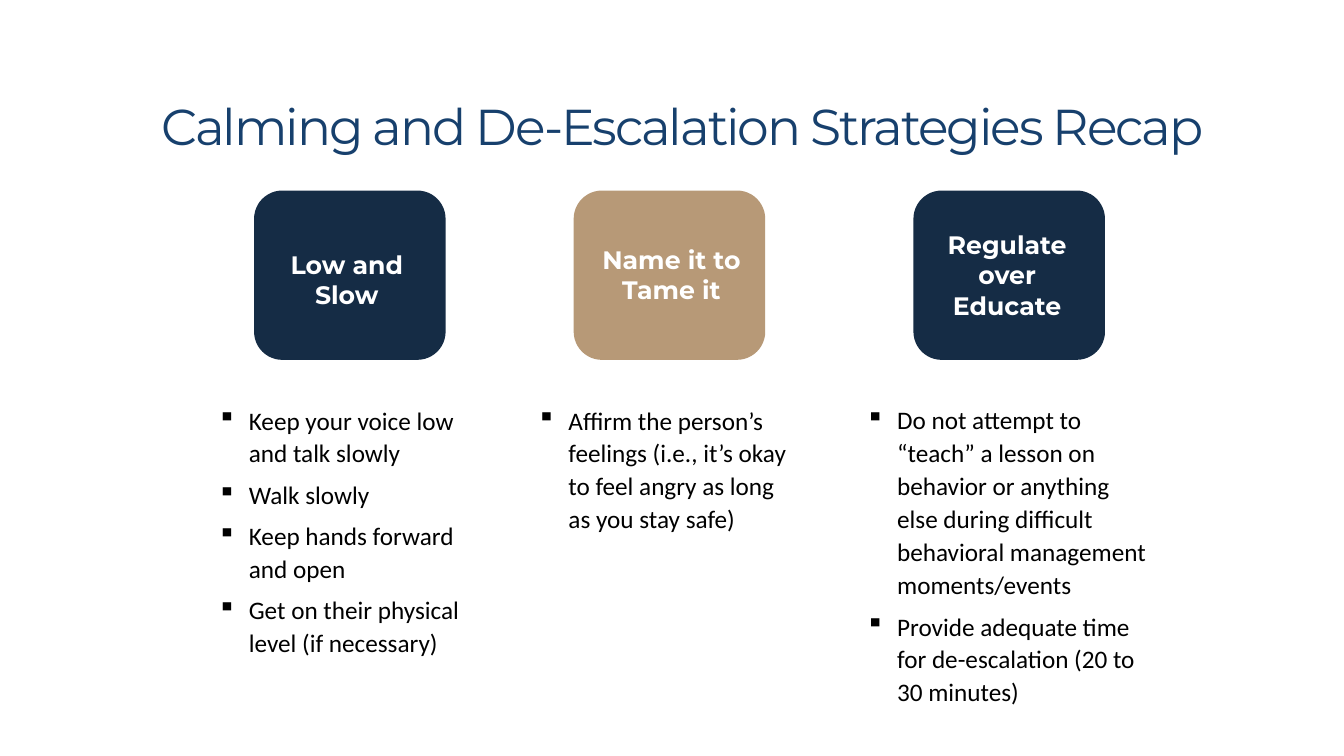
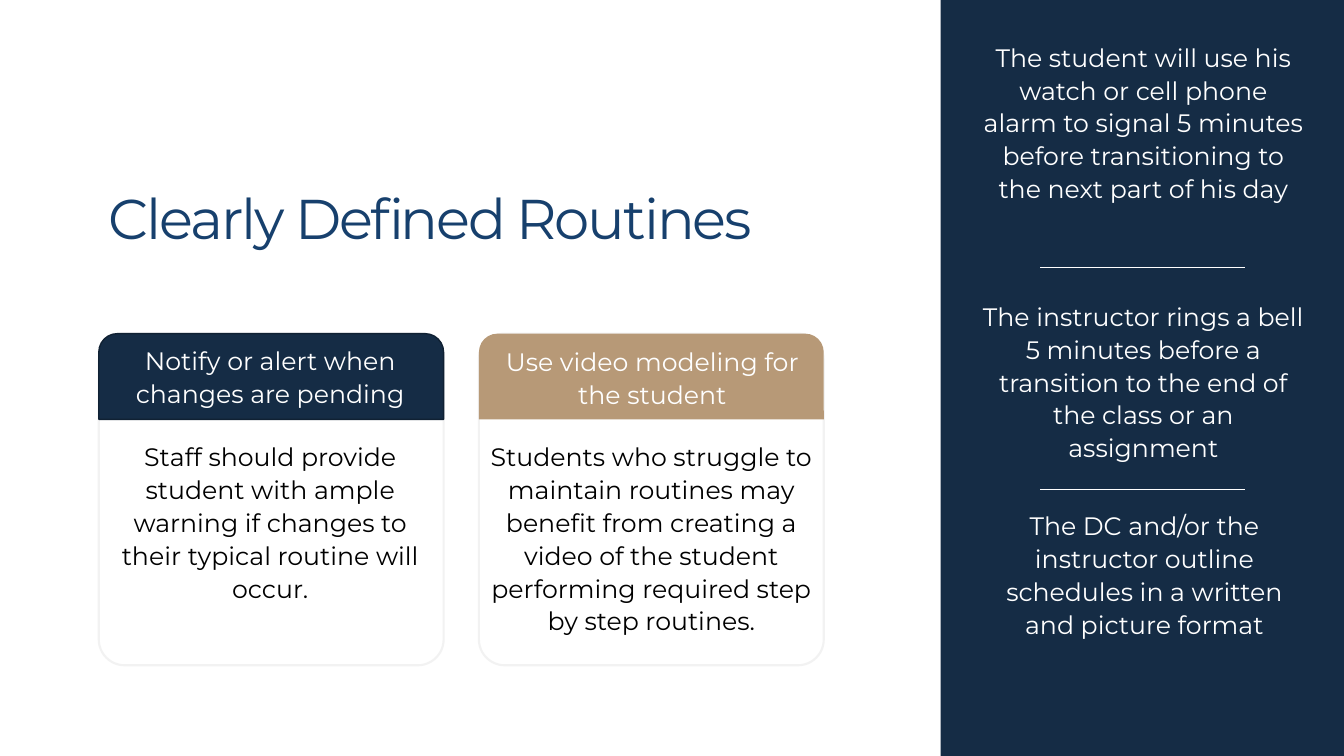
from lxml.etree import SubElement
from pptx import Presentation
from pptx.dml.color import RGBColor
from pptx.enum.shapes import MSO_CONNECTOR, MSO_SHAPE
from pptx.enum.text import MSO_ANCHOR, PP_ALIGN
from pptx.oxml.ns import qn
from pptx.util import Inches, Pt

NAVY = RGBColor(0x15, 0x2C, 0x45)
NAVY_EDGE = RGBColor(0x10, 0x21, 0x33)
TAN = RGBColor(0xB7, 0x99, 0x77)
TITLE_BLUE = RGBColor(0x17, 0x40, 0x6D)
PALE = RGBColor(0xF2, 0xF2, 0xF2)
WHITE = RGBColor(0xFF, 0xFF, 0xFF)
BLACK = RGBColor(0x00, 0x00, 0x00)

HEAD_FONT = "Montserrat"
BODY_FONT = "Calibri"

TILE_TOP, TILE_W, TILE_H = 1.89, 1.9, 1.68
CARD_TOP, CARD_W, CARD_H, HEADER_H = 3.31, 3.42, 3.29, 0.85

STRATEGIES = [
    (2.52, NAVY, "Low and Slow", (2.51, 2.42), (2.06, 2.82, 2.65), [
        "Keep your voice low and talk slowly",
        "Walk slowly",
        "Keep hands forward and open",
        "Get on their physical level (if necessary)",
    ]),
    (5.69, TAN, "Name it to Tame it", (5.73, 2.37), (5.23, 2.82, 1.41), [
        "Affirm the person’s feelings (i.e., it’s okay to feel angry as long "
        "as you stay safe)",
    ]),
    (9.06, NAVY, "Regulate over Educate", (9.06, 2.37), (8.49, 3.03, 3.14), [
        "Do not attempt to “teach” a lesson on behavior or anything else "
        "during difficult behavioral management moments/events",
        "Provide adequate time for de-escalation (20 to 30 minutes)",
    ]),
]

ROUTINES = [
    (0.98, NAVY, NAVY_EDGE, (0.97, 3.35), "Notify or alert when changes are pending",
     (0.97, 1.73), "Staff should provide student with ample warning if changes to "
     "their typical routine will occur."),
    (4.75, TAN, None, (4.76, 3.36), "Use video modeling for the student",
     (4.75, 2.06), "Students who struggle to maintain routines may benefit from "
     "creating a video of the student performing required step by step routines."),
]

EXAMPLES = [
    (9.63, 0.34, 2.06, "The student will use his watch or cell phone alarm to signal "
     "5 minutes before transitioning to the next part of his day"),
    (9.63, 2.91, 1.73, "The instructor rings a bell 5 minutes before a transition to "
     "the end of the class or an assignment"),
    (9.64, 4.99, 1.4, "The DC and/or the instructor outline schedules in a written "
     "and picture format"),
]


def add_box(s, kind, left, top, width, height, fill=None, line=None, line_width=1, adj=()):
    sp = s.shapes.add_shape(kind, Inches(left), Inches(top), Inches(width), Inches(height))
    sp.shadow.inherit = False
    if fill is None:
        sp.fill.background()
    else:
        sp.fill.solid()
        sp.fill.fore_color.rgb = fill
    if line is None:
        sp.line.fill.background()
    else:
        sp.line.color.rgb = line
        sp.line.width = Pt(line_width)
    for i, value in enumerate(adj):
        sp.adjustments[i] = value
    return sp


def add_text(s, left, top, width, height, texts, color, size=18, font=HEAD_FONT,
             bold=False, align=PP_ALIGN.CENTER, anchor=MSO_ANCHOR.TOP):
    sp = s.shapes.add_textbox(Inches(left), Inches(top), Inches(width), Inches(height))
    tf = sp.text_frame
    tf.word_wrap = True
    tf.vertical_anchor = anchor
    for i, text in enumerate(texts):
        p = tf.paragraphs[0] if i == 0 else tf.add_paragraph()
        p.text = text
        p.alignment = align
        p.font.name = font
        p.font.size = Pt(size)
        p.font.bold = bold
        p.font.color.rgb = color
    return tf


def add_title(s, left, top, width, height, text, size, align):
    tf = add_text(s, left, top, width, height, [text], TITLE_BLUE, size, align=align)
    for r in tf.paragraphs[0].runs:
        r.font._element.set("spc", "-150")


def add_body(s, left, top, width, height, texts, color, **style):
    tf = add_text(s, left, top, width, height, texts, color, **style)
    for p in tf.paragraphs:
        p.line_spacing = 1.09
        p.space_before = Pt(6)
    return tf


def add_bullets(s, left, top, width, height, texts):
    tf = add_body(s, left, top, width, height, texts, BLACK,
                  font=BODY_FONT, align=PP_ALIGN.LEFT)
    indent = Inches(0.31)
    for p in tf.paragraphs:
        pPr = p._p.get_or_add_pPr()
        pPr.set("marL", str(indent))
        pPr.set("indent", str(-indent))
        bullet = pPr.makeelement(qn("a:buChar"), {"char": "▪"})
        pPr.insert_element_before(bullet, "a:tabLst", "a:defRPr", "a:extLst")


def add_divider(s, left, right, y):
    line = s.shapes.add_connector(MSO_CONNECTOR.STRAIGHT, Inches(left), Inches(y),
                                  Inches(right), Inches(y))
    line.line.color.rgb = WHITE
    line.line.width = Pt(0.5)
    SubElement(line._element.spPr, qn("a:effectLst"))


def add_strategy(s, left, fill, label, label_at, body, bullets):
    add_box(s, MSO_SHAPE.ROUNDED_RECTANGLE, left, TILE_TOP, TILE_W, TILE_H, fill)
    add_text(s, *label_at, 1.86, 0.71, [label], WHITE, bold=True, anchor=MSO_ANCHOR.MIDDLE)
    body_left, body_width, body_height = body
    add_bullets(s, body_left, 3.94, body_width, body_height, bullets)


def add_card(s, left, fill, edge, header_at, header, body, text):
    add_box(s, MSO_SHAPE.ROUNDED_RECTANGLE, left, CARD_TOP, CARD_W, CARD_H,
            line=PALE, line_width=1.5, adj=(0.078,))
    add_box(s, MSO_SHAPE.ROUND_2_SAME_RECTANGLE, left, CARD_TOP, CARD_W, HEADER_H,
            fill, edge, adj=(0.216, 0))
    add_body(s, *header_at, CARD_W, 0.74, [header], WHITE)
    body_left, body_height = body
    add_body(s, body_left, 4.3, CARD_W, body_height, [text], BLACK)


def build_strategies(s):
    add_title(s, 1.35, 0.89, 10.84, 0.71, "Calming and De-Escalation Strategies Recap",
              36, PP_ALIGN.CENTER)
    for strategy in STRATEGIES:
        add_strategy(s, *strategy)


def build_routines(s):
    add_title(s, 0.98, 1.77, 7.41, 0.77, "Clearly Defined Routines", 40, PP_ALIGN.LEFT)
    add_box(s, MSO_SHAPE.RECTANGLE, 9.33, 0, 4, 7.5, NAVY)
    for y in (2.65, 4.85):
        add_divider(s, 10.32, 12.35, y)
    for left, top, height, text in EXAMPLES:
        add_body(s, left, top, CARD_W, height, [text], WHITE)
    for routine in ROUTINES:
        add_card(s, *routine)


def main():
    prs = Presentation()
    prs.slide_width = Inches(13.33)
    prs.slide_height = Inches(7.5)
    for build in (build_strategies, build_routines):
        build(prs.slides.add_slide(prs.slide_layouts[6]))
    prs.save("out.pptx")


if __name__ == "__main__":
    main()
